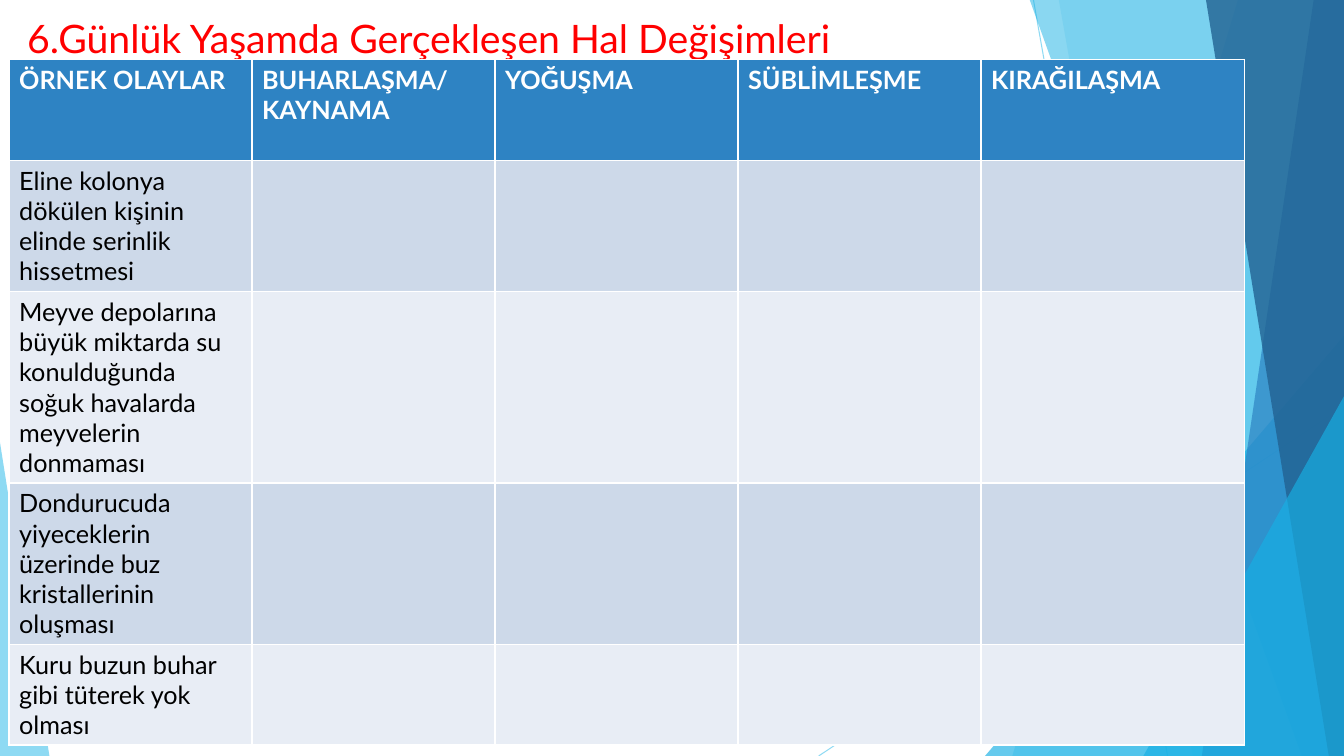
from dataclasses import dataclass

from lxml.etree import SubElement
from pptx import Presentation
from pptx.dml.color import RGBColor as RGB
from pptx.enum.shapes import MSO_CONNECTOR as CONN, MSO_SHAPE as SHAPE
from pptx.enum.text import MSO_ANCHOR as ANCHOR, MSO_AUTO_SIZE as AUTO, PP_ALIGN as ALIGN
from pptx.oxml.ns import qn
from pptx.slide import Slide
from pptx.text.text import TextFrame
from pptx.util import Inches, Pt


@dataclass(frozen=True)
class Theme:
    """Colours, font and type sizes of the slide."""
    font: str = "Lato"
    title_size: int = 28
    table_size: int = 18
    title: str = "FF0000"
    header: str = "2E83C3"
    header_text: str = "FFFFFF"
    body_text: str = "000000"
    bands: tuple[str, str] = ("CDD9E9", "E8EDF5")
    sky: str = "5FCBEF"
    cyan: str = "17B0E4"
    blue: str = "2E83C3"
    navy: str = "226292"


@dataclass(frozen=True)
class Ray:
    """Thin translucent line of the backdrop."""
    start: tuple[float, float]
    end: tuple[float, float]
    color: str
    opacity: int


@dataclass(frozen=True)
class Facet:
    """Full-height panel running from a slanted edge to the right slide edge."""
    top_x: float
    bottom_x: float
    color: str
    opacity: int


@dataclass(frozen=True)
class Wedge:
    """Right triangle standing on the bottom slide edge."""
    left: float
    top: float
    width: float
    apex: int
    color: str
    opacity: int


T = Theme()
WIDTH, HEIGHT, TOP = 13.33, 7.5, -0.01
BACKDROP: list[Ray | Facet | Wedge] = [
    Ray((10.25, 0), (11.58, HEIGHT), T.sky, 70),
    Ray((WIDTH, 4.03), (8.12, HEIGHT), T.sky, 70),
    Facet(12.28, 10.04, T.sky, 36),
    Facet(10.5, 11.83, T.sky, 20),
    Wedge(9.77, 3.33, 3.56, 1, T.cyan, 66),
    Facet(10.21, 12.91, T.cyan, 50),
    Facet(13.03, 11.92, T.blue, 70),
    Facet(11.96, 13.18, T.navy, 80),
    Wedge(11.34, 3.93, 1.99, 1, T.cyan, 66),
    Wedge(0, 4.39, 0.49, 0, T.sky, 70),
]
TITLE = "6.Günlük Yaşamda Gerçekleşen Hal Değişimleri"
HEADERS = ["ÖRNEK OLAYLAR", "BUHARLAŞMA/\nKAYNAMA", "YOĞUŞMA", "SÜBLİMLEŞME", "KIRAĞILAŞMA"]
EVENTS = [
    "Eline kolonya dökülen kişinin elinde serinlik hissetmesi",
    "Meyve depolarına büyük miktarda su konulduğunda soğuk havalarda meyvelerin donmaması",
    "Dondurucuda yiyeceklerin üzerinde buz kristallerinin oluşması",
    "Kuru buzun buhar gibi tüterek yok olması",
]
COL_WIDTHS = [2.41] * 4 + [2.61]
ROW_HEIGHTS = [1.0, 1.3, 1.9, 1.6, 1.0]


def write(tf: TextFrame, text: str, *, size: int, color: str, bold: bool = False) -> None:
    """Fill a text frame with left-aligned, formatted paragraphs."""
    tf.text = text
    for p in tf.paragraphs:
        p.alignment = ALIGN.LEFT
        for r in p.runs:
            r.font.name, r.font.size, r.font.bold = T.font, Pt(size), bold
            r.font.color.rgb = RGB.from_string(color)


def draw_backdrop(s: Slide, item: Ray | Facet | Wedge) -> None:
    """Draw one translucent element of the backdrop."""
    if isinstance(item, Ray):
        sp = s.shapes.add_connector(CONN.STRAIGHT, *map(Inches, item.start + item.end))
        sp.line.width = Pt(0.75)
        sp.line.color.rgb = RGB.from_string(item.color)
        SubElement(sp.element.spPr, qn("a:effectLst"))
    else:
        if isinstance(item, Facet):
            corners = [(WIDTH, TOP), (WIDTH, HEIGHT), (item.bottom_x, HEIGHT)]
            outline = s.shapes.build_freeform(Inches(item.top_x), Inches(TOP))
            outline.add_line_segments([(Inches(x), Inches(y)) for x, y in corners], close=True)
            sp = outline.convert_to_shape()
        else:
            box = (item.left, item.top, item.width, HEIGHT - item.top)
            sp = s.shapes.add_shape(SHAPE.ISOSCELES_TRIANGLE, *map(Inches, box))
            sp.adjustments[0] = item.apex
        sp.fill.solid()
        sp.fill.fore_color.rgb = RGB.from_string(item.color)
        sp.line.fill.background()
        sp.shadow.inherit = False
    for color in sp.element.spPr.iter(qn("a:srgbClr")):
        SubElement(color, qn("a:alpha"), val=str(item.opacity * 1000))


def draw_title(s: Slide) -> None:
    """Place and format the title in front of the backdrop."""
    title = s.shapes.title
    title.element.getparent().append(title.element)
    title.left, title.top, title.width, title.height = map(Inches, (0.17, 0.09, 9.97, 1.05))
    tf = title.text_frame
    tf.vertical_anchor, tf.auto_size, tf.word_wrap = ANCHOR.TOP, AUTO.NONE, True
    write(tf, TITLE, size=T.title_size, color=T.title)


def draw_table(s: Slide) -> None:
    """Draw the table of events and changes of state."""
    rows = [HEADERS] + [[event] + [""] * (len(HEADERS) - 1) for event in EVENTS]
    box = (0.09, 0.59, sum(COL_WIDTHS), sum(ROW_HEIGHTS))
    table = s.shapes.add_table(len(rows), len(HEADERS), *map(Inches, box)).table
    for column, width in zip(table.columns, COL_WIDTHS):
        column.width = Inches(width)
    for i, (row, height, texts) in enumerate(zip(table.rows, ROW_HEIGHTS, rows)):
        row.height = Inches(height)
        header = i == 0
        fill = T.header if header else T.bands[(i - 1) % 2]
        color = T.header_text if header else T.body_text
        for cell, text in zip(row.cells, texts):
            cell.fill.solid()
            cell.fill.fore_color.rgb = RGB.from_string(fill)
            write(cell.text_frame, text, size=T.table_size, color=color, bold=header)


def main() -> None:
    """Build the slide and save it."""
    prs = Presentation()
    prs.slide_width, prs.slide_height = Inches(WIDTH), Inches(HEIGHT)
    s = prs.slides.add_slide(prs.slide_layouts[5])
    for item in BACKDROP:
        draw_backdrop(s, item)
    draw_title(s)
    draw_table(s)
    prs.save("out.pptx")


if __name__ == "__main__":
    main()
